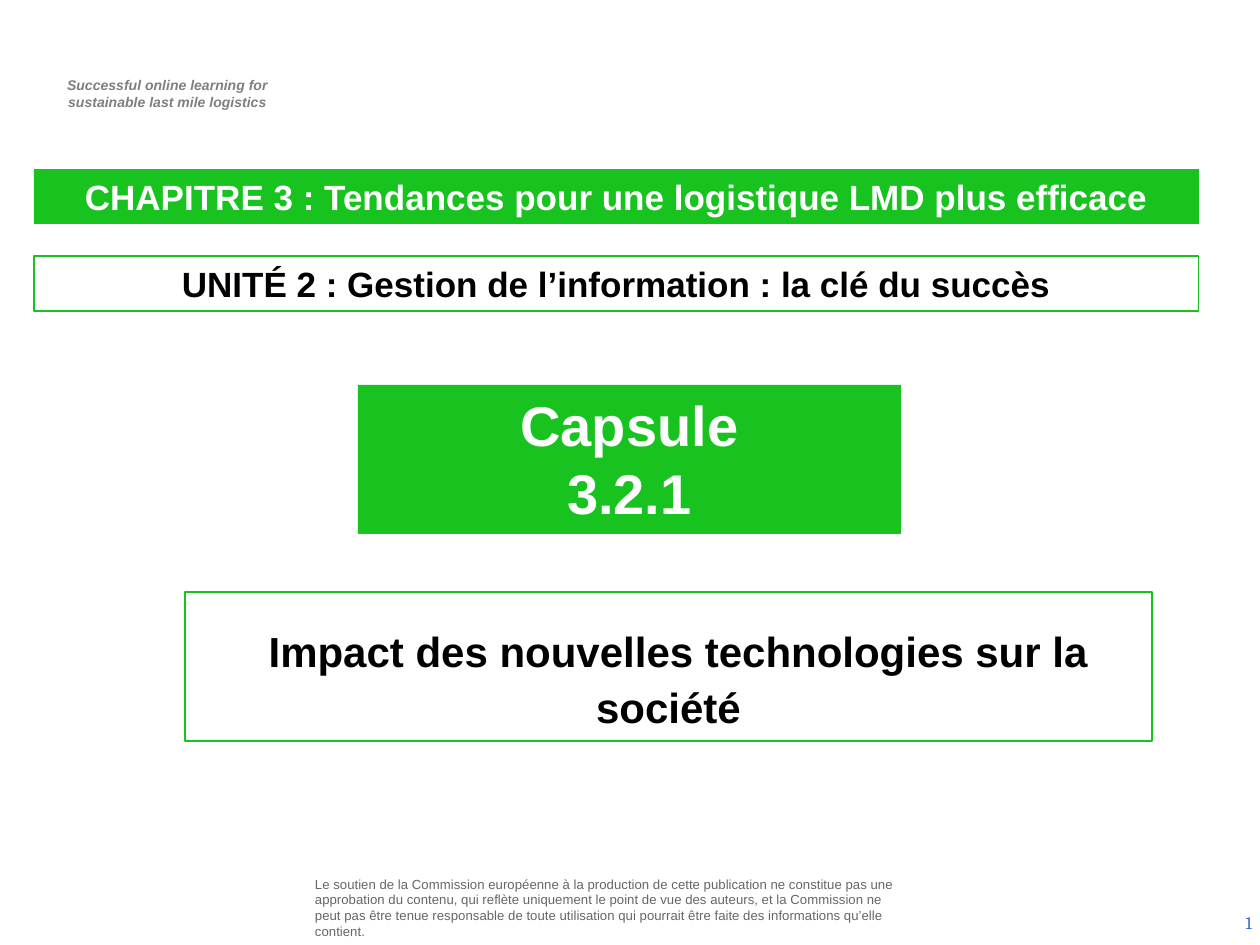
import pptx
import pptx.dml.color
import pptx.enum.shapes
import pptx.enum.text
import pptx.util

PX = 914400 // 126
ALIGN = pptx.enum.text.PP_ALIGN
ANCHOR = pptx.enum.text.MSO_ANCHOR

THEME = {
    "green": "18C320", "white": "FFFFFF", "black": "000000",
    "motto": "7F7F7F", "notice": "666666", "number": "3366CC",
    "font": "Arial", "number_font": "Cambria",
    "motto_size": 8, "notice_size": 7.5, "number_size": 10,
    "banner_size": 20, "capsule_size": 32, "topic_size": 24, "lead_size": 40,
}

MOTTO = ["Successful online learning for", "sustainable last mile logistics"]
NOTICE = (
    "Le soutien de la Commission européenne à la production de cette publication "
    "ne constitue pas une approbation du contenu, qui reflète uniquement le point "
    "de vue des auteurs, et la Commission ne peut pas être tenue responsable de "
    "toute utilisation qui pourrait être faite des informations qu’elle contient."
)
CHAPTER = "CHAPITRE 3 : Tendances pour une logistique LMD plus efficace"
UNIT = "UNITÉ 2 : Gestion de l’information : la clé du succès"
CAPSULE = ["Capsule", "3.2.1"]
TOPIC = "Impact des nouvelles technologies sur la société"

BANNER_LEFT, BANNER_WIDTH, BANNER_HEIGHT = 34, 1165, 55
CARD_HEIGHT = 149


def rgb(name):
    return pptx.dml.color.RGBColor.from_string(THEME[name])


def emu(*lengths):
    return [length * PX for length in lengths]


def write(box, text, *, size, color, font="font", bold=False, italic=False,
          align=ALIGN.CENTER, anchor=ANCHOR.TOP, margins=(13, 6), indent=0, lead=None):
    """Fill a box with one paragraph per line; lead is the size of an opening space."""
    frame = box.text_frame
    frame.word_wrap = True
    frame.auto_size = pptx.enum.text.MSO_AUTO_SIZE.NONE
    frame.vertical_anchor = anchor
    frame.margin_left = frame.margin_right = margins[0] * PX
    frame.margin_top = frame.margin_bottom = margins[1] * PX
    for i, line in enumerate([text] if isinstance(text, str) else text):
        paragraph = frame.add_paragraph() if i else frame.paragraphs[0]
        paragraph.alignment = align
        if indent:
            paragraph._p.get_or_add_pPr().set("marL", str(indent * PX))
        pieces = [(" ", lead)] if lead else []
        for piece, piece_size in pieces + [(line, size)]:
            run = paragraph.add_run()
            run.text = piece
            run.font.name = THEME[font]
            run.font.size = pptx.util.Pt(THEME[piece_size])
            run.font.bold, run.font.italic = bold, italic
            run.font.color.rgb = rgb(color)
    return box


def add_text(slide, at, text, **style):
    return write(slide.shapes.add_textbox(*emu(*at)), text, **style)


def add_panel(slide, at, text, *, fill=None, line=None, **style):
    panel = slide.shapes.add_shape(
        pptx.enum.shapes.MSO_SHAPE.RECTANGLE, *emu(*at))
    panel.shadow.inherit = False
    if fill:
        panel.fill.solid()
        panel.fill.fore_color.rgb = rgb(fill)
    else:
        panel.fill.background()
    if line:
        panel.line.color.rgb = rgb("green")
        panel.line.width = pptx.util.Pt(line)
    else:
        panel.line.fill.background()
    return write(panel, text, bold=True, **style)


def main():
    deck = pptx.Presentation()
    deck.slide_width, deck.slide_height = pptx.util.Inches(10), pptx.util.Inches(7.5)
    slide = deck.slides.add_slide(deck.slide_layouts[5])

    chapter = slide.shapes.title
    chapter.left, chapter.top, chapter.width, chapter.height = emu(
        BANNER_LEFT, 169, BANNER_WIDTH, BANNER_HEIGHT)
    chapter.fill.solid()
    chapter.fill.fore_color.rgb = rgb("green")
    write(chapter, CHAPTER, size="banner_size", color="white", bold=True)

    add_panel(slide, (BANNER_LEFT, 256, BANNER_WIDTH, BANNER_HEIGHT), UNIT,
              line=0.75, size="banner_size", color="black")
    add_panel(slide, (358, 385, 543, CARD_HEIGHT), CAPSULE,
              fill="green", size="capsule_size", color="white")
    add_panel(slide, (185, 592, 967, CARD_HEIGHT), TOPIC,
              line=1.5, size="topic_size", color="black", lead="lead_size")

    add_text(slide, (37, 71, 256, 47), MOTTO, size="motto_size", color="motto",
             bold=True, italic=True, indent=5)
    add_text(slide, (310, 876, 596, 63), NOTICE, size="notice_size", color="notice",
             align=ALIGN.LEFT, anchor=ANCHOR.MIDDLE, margins=(5, 5))
    number = add_text(slide, (971, 898, 294, 50), "1", size="number_size",
                      color="number", font="number_font", align=ALIGN.RIGHT,
                      anchor=ANCHOR.MIDDLE)
    field = number.text_frame.paragraphs[0].runs[0]._r
    field.tag = pptx.oxml.ns.qn("a:fld")
    field.set("id", "{B6F15528-21DE-4FAA-801E-634DDDAF4B2B}")
    field.set("type", "slidenum")

    deck.save("out.pptx")


if __name__ == "__main__":
    main()
